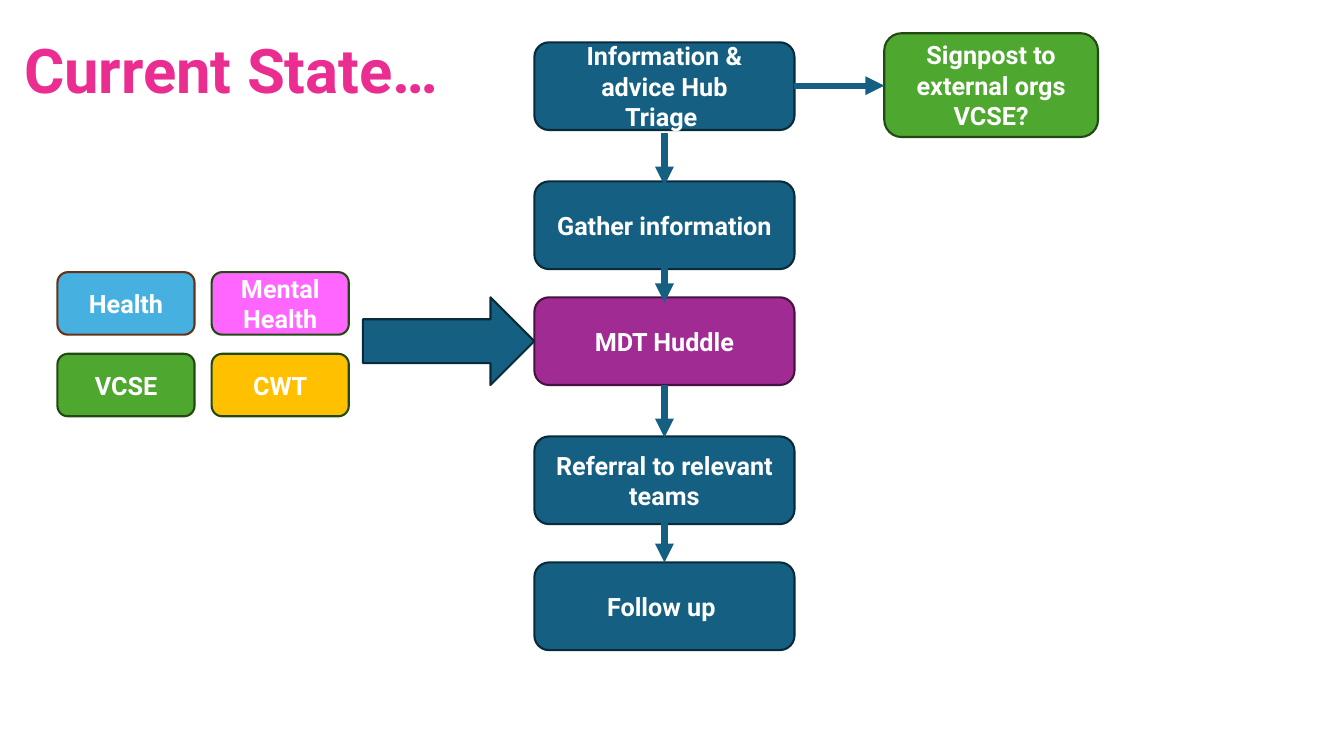
from dataclasses import dataclass

import lxml.etree
import pptx
import pptx.dml.color
import pptx.enum.shapes
import pptx.enum.text
import pptx.oxml.ns
import pptx.shapes.autoshape
import pptx.slide
import pptx.text.text
import pptx.util

Inches = pptx.util.Inches
RGBColor = pptx.dml.color.RGBColor
SHAPES = pptx.enum.shapes.MSO_SHAPE
ALIGN = pptx.enum.text.PP_ALIGN
ANCHOR = pptx.enum.text.MSO_ANCHOR

BLUE = RGBColor(0x15, 0x60, 0x82)
DARK_BLUE = RGBColor(0x09, 0x2A, 0x39)
GREEN = RGBColor(0x4E, 0xA7, 0x2E)
DARK_GREEN = RGBColor(0x22, 0x49, 0x14)
PURPLE = RGBColor(0xA0, 0x2B, 0x93)
DARK_PURPLE = RGBColor(0x46, 0x13, 0x40)
SKY = RGBColor(0x46, 0xB1, 0xE1)
BROWN = RGBColor(0x66, 0x32, 0x16)
PINK = RGBColor(0xFF, 0x66, 0xFF)
GOLD = RGBColor(0xFF, 0xC0, 0x00)
MAGENTA = RGBColor(0xEB, 0x2D, 0x91)
WHITE = RGBColor(0xFF, 0xFF, 0xFF)

STEP_LEFT, STEP_WIDTH, STEP_HEIGHT = 5.3, 2.58, 0.87
STEP_CENTRE = STEP_LEFT + STEP_WIDTH / 2
HUDDLE_TOP = 2.95
TEAM_LEFT, TEAM_TOP, TEAM_WIDTH, TEAM_HEIGHT = 0.57, 2.7, 1.36, 0.62
TEAM_COLUMN_PITCH, TEAM_ROW_PITCH = 1.53, 0.81


@dataclass(frozen=True)
class Block:
    left: float
    top: float
    width: float
    height: float
    lines: tuple[str, ...] = ()
    fill: RGBColor = BLUE
    outline: RGBColor = DARK_BLUE
    preset: SHAPES = SHAPES.ROUNDED_RECTANGLE


@dataclass(frozen=True)
class Arrow:
    start_x: float
    start_y: float
    end_x: float
    end_y: float


def step(top: float, *lines: str, fill: RGBColor = BLUE, outline: RGBColor = DARK_BLUE) -> Block:
    return Block(STEP_LEFT, top, STEP_WIDTH, STEP_HEIGHT, lines, fill, outline)


def team(column: int, row: int, name: str, fill: RGBColor, outline: RGBColor = DARK_GREEN) -> Block:
    return Block(TEAM_LEFT + column * TEAM_COLUMN_PITCH, TEAM_TOP + row * TEAM_ROW_PITCH,
                 TEAM_WIDTH, TEAM_HEIGHT, (name,), fill, outline)


def down_arrow(start_y: float, end_y: float) -> Arrow:
    return Arrow(STEP_CENTRE, start_y, STEP_CENTRE, end_y)


BLOCKS = (
    step(0.42, "Information & advice Hub", "Triage "),
    Block(8.77, 0.33, 2.12, 1.03, ("Signpost to external orgs", "VCSE?"), GREEN, DARK_GREEN),
    step(1.8, "Gather information"),
    step(HUDDLE_TOP, "MDT Huddle", fill=PURPLE, outline=DARK_PURPLE),
    team(0, 0, "Health", SKY, BROWN),
    team(1, 0, "Mental Health", PINK),
    team(0, 1, "VCSE", GREEN),
    team(1, 1, "CWT", GOLD),
    Block(3.6, HUDDLE_TOP, 1.7, STEP_HEIGHT, preset=SHAPES.RIGHT_ARROW),
    step(4.33, "Referral to relevant teams"),
    step(5.58, "Follow up "),
)

ARROWS = (
    down_arrow(1.32, 1.84),
    down_arrow(2.47, 3),
    down_arrow(3.82, 4.34),
    down_arrow(5.05, 5.58),
    Arrow(STEP_LEFT + STEP_WIDTH, 0.85, 8.77, 0.85),
)


def format_font(paragraph: pptx.text.text._Paragraph, size: float, colour: RGBColor) -> None:
    values = {"name": "Roboto", "size": pptx.util.Pt(size), "bold": True}
    for name, value in values.items():
        setattr(paragraph.font, name, value)
    paragraph.font.color.rgb = colour


def add_title(slide: pptx.slide.Slide, text: str) -> None:
    box = slide.shapes.add_textbox(Inches(0.14), Inches(0), Inches(8.87), Inches(1.45))
    frame = box.text_frame
    frame.word_wrap = True
    frame.vertical_anchor = ANCHOR.MIDDLE
    paragraph = frame.paragraphs[0]
    paragraph.text = text
    paragraph.line_spacing = 0.9
    format_font(paragraph, 44, MAGENTA)


def add_block(slide: pptx.slide.Slide, block: Block) -> None:
    shape = slide.shapes.add_shape(block.preset, Inches(block.left), Inches(block.top),
                                   Inches(block.width), Inches(block.height))
    shape.shadow.inherit = False
    shape.fill.solid()
    shape.fill.fore_color.rgb = block.fill
    shape.line.color.rgb = block.outline
    shape.line.width = pptx.util.Pt(1.5)
    if block.lines:
        fill_text(shape, block.lines)


def fill_text(shape: pptx.shapes.autoshape.Shape, lines: tuple[str, ...]) -> None:
    frame = shape.text_frame
    frame.word_wrap = True
    frame.vertical_anchor = ANCHOR.MIDDLE
    frame.text = "\n".join(lines)
    for paragraph in frame.paragraphs:
        paragraph.alignment = ALIGN.CENTER
        format_font(paragraph, 18, WHITE)


def add_arrow(slide: pptx.slide.Slide, arrow: Arrow) -> None:
    connector = slide.shapes.add_connector(
        pptx.enum.shapes.MSO_CONNECTOR.STRAIGHT,
        Inches(arrow.start_x), Inches(arrow.start_y), Inches(arrow.end_x), Inches(arrow.end_y))
    connector.line.color.rgb = BLUE
    connector.line.width = pptx.util.Pt(4.5)
    qualified = pptx.oxml.ns.qn
    line = connector.line._get_or_add_ln()
    lxml.etree.SubElement(line, qualified("a:tailEnd"), type="triangle")
    lxml.etree.SubElement(connector._element.spPr, qualified("a:effectLst"))


def main() -> None:
    presentation = pptx.Presentation()
    presentation.slide_width = Inches(13.33)
    presentation.slide_height = Inches(7.5)
    slide = presentation.slides.add_slide(presentation.slide_layouts[6])
    add_title(slide, "Current State…")
    for block in BLOCKS:
        add_block(slide, block)
    for arrow in ARROWS:
        add_arrow(slide, arrow)
    presentation.save("out.pptx")


if __name__ == "__main__":
    main()
